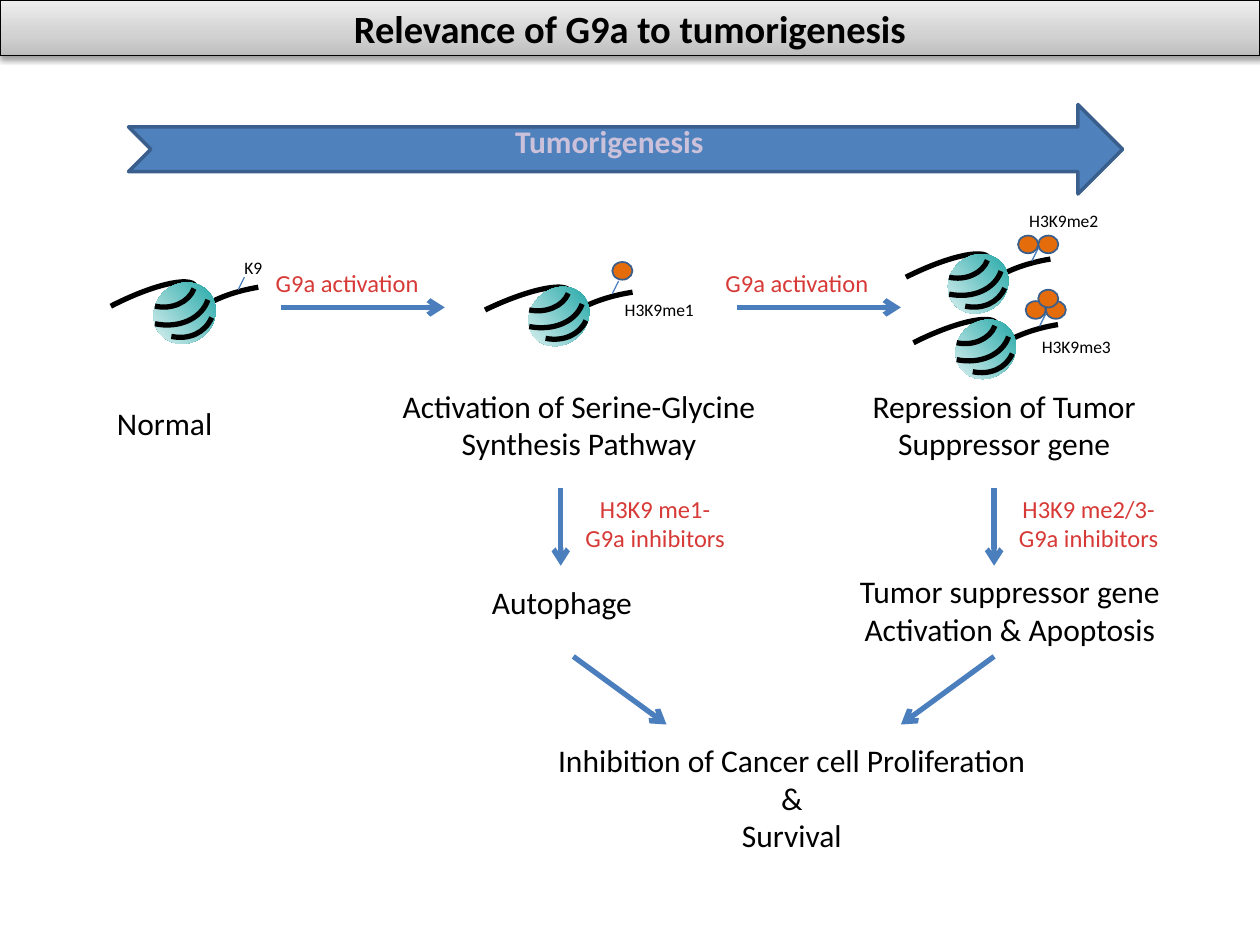
from copy import deepcopy

from lxml.etree import SubElement
from pptx import Presentation
from pptx.dml.color import RGBColor
from pptx.enum.shapes import MSO_CONNECTOR, MSO_SHAPE
from pptx.enum.text import MSO_ANCHOR, MSO_AUTO_SIZE, PP_ALIGN
from pptx.oxml.ns import qn
from pptx.util import Inches, Pt

BLACK = RGBColor(0x00, 0x00, 0x00)
WHITE = RGBColor(0xFF, 0xFF, 0xFF)
BLUE = RGBColor(0x4F, 0x81, 0xBD)
NAVY = RGBColor(0x3A, 0x5F, 0x8C)
STEEL = RGBColor(0x4B, 0x7E, 0xBC)
LILAC = RGBColor(0xCC, 0xC1, 0xDA)
RED = RGBColor(0xD7, 0x3A, 0x36)
ORANGE = RGBColor(0xE4, 0x6C, 0x0A)
TEAL = RGBColor(0x00, 0x99, 0x99)
GREYS = [(0, RGBColor(0xBD, 0xBD, 0xBD)), (0.35, RGBColor(0xD1, 0xD1, 0xD1)),
         (1, RGBColor(0xEE, 0xEE, 0xEE))]

# Bezier points in inches, measured from the outer end of the left DNA tail
TAILS = [
    [(0, 0), (0.33, -0.17), (0.63, -0.24), (0.67, -0.16)],
    [(1.17, -0.15), (0.81, -0.09), (0.55, 0.08), (0.57, 0.25)],
]
BANDS = [
    [(0.35, 0), (0.48, 0.03), (0.62, -0.03), (0.66, -0.14)],
    [(0.35, 0.14), (0.54, 0.18), (0.72, 0.10), (0.77, -0.05)],
    [(0.48, 0.24), (0.62, 0.27), (0.75, 0.21), (0.80, 0.09)],
]


def write(frame, words, size=18, color=BLACK, bold=False, align=PP_ALIGN.CENTER):
    frame.word_wrap = True
    frame.text = words
    for para in frame.paragraphs:
        para.alignment = align
        font = para.runs[0].font
        font.name, font.size, font.bold = "Calibri", Pt(size), bold
        font.color.rgb = color


def label(slide, words, box, **style):
    write(slide.shapes.add_textbox(*map(Inches, box)).text_frame, words, **style)


def blend(fill, stops, angle):
    """Fill with a linear gradient of (position, colour) stops."""
    fill.gradient()
    fill.gradient_angle = angle
    first = fill.gradient_stops[0]._gs
    for _ in stops[2:]:
        first.addnext(deepcopy(first))
    for stop, (place, color) in zip(fill.gradient_stops, stops):
        stop.position = place
        stop.color.rgb = color


def shape(slide, kind, box, fill=None, line=None, width=1):
    item = slide.shapes.add_shape(kind, *map(Inches, box))
    item.shadow.inherit = False
    if fill is not None:
        item.fill.solid()
        item.fill.fore_color.rgb = fill
    if line is None:
        item.line.fill.background()
    else:
        item.line.color.rgb = line
        item.line.width = Pt(width)
    return item


def line(slide, start, end, width=0.75, arrow=False):
    item = slide.shapes.add_connector(
        MSO_CONNECTOR.STRAIGHT, *map(Inches, start + end))
    item.line.color.rgb = STEEL
    item.line.width = Pt(width)
    if arrow:
        SubElement(item.line._get_or_add_ln(), qn("a:tailEnd"), type="arrow")
    SubElement(item._element.spPr, qn("a:effectLst"))


def curve(slide, points):
    """Draw one open cubic curve through a start, two controls and an end."""
    start, *rest = [(Inches(x), Inches(y)) for x, y in points]
    build = slide.shapes.build_freeform(*start)
    build.add_line_segments(rest, close=False)
    item = build.convert_to_shape()
    item.shadow.inherit = False
    item.fill.background()
    item.line.color.rgb = BLACK
    item.line.width = Pt(3)
    route = item._element.find(".//" + qn("a:path"))
    steps = route.findall(qn("a:lnTo"))
    bend = SubElement(route, qn("a:cubicBezTo"))
    for step in steps:
        bend.append(step[0])
        route.remove(step)


def histone(slide, x, y, wide=1, high=1):
    """Draw a nucleosome whose left DNA tail starts at x, y."""
    def strands(group):
        for points in group:
            curve(slide, [(x + a * wide, y + b * high) for a, b in points])

    strands(TAILS)
    ball = shape(slide, MSO_SHAPE.OVAL,
                 (x + 0.33 * wide, y - 0.18 * high, 0.51 * wide, 0.47 * high))
    blend(ball.fill, [(0, TEAL), (1, WHITE)], 0)
    ball.rotation = 139.8
    strands(BANDS)


def stem(slide, x, y):
    line(slide, (x, y), (x - 0.05, y + 0.1))


def methyl(slide, x, y):
    shape(slide, MSO_SHAPE.OVAL, (x, y, 0.16, 0.14), ORANGE, NAVY)


def header(slide):
    title = slide.shapes.title
    title.left, title.top, title.width, title.height = map(
        Inches, (0, 0, 10, 0.44))
    blend(title.fill, GREYS, 90)
    title.line.color.rgb = BLACK
    title.line.width = Pt(0.75)
    effects = SubElement(title._element.spPr, qn("a:effectLst"))
    shade = SubElement(effects, qn("a:outerShdw"), blurRad=str(Pt(3.1)),
                       dist=str(Pt(1.6)), dir="5400000", rotWithShape="0")
    tint = SubElement(shade, qn("a:srgbClr"), val="000000")
    SubElement(tint, qn("a:alpha"), val="38000")
    frame = title.text_frame
    frame.auto_size = MSO_AUTO_SIZE.NONE
    frame.vertical_anchor = MSO_ANCHOR.MIDDLE
    write(frame, "Relevance of G9a to tumorigenesis", size=22, bold=True)


def histones(slide):
    histone(slide, 0.88, 2.43)
    stem(slide, 1.94, 2.2)

    histone(slide, 3.85, 2.46, high=0.94)
    methyl(slide, 4.86, 2.08)
    stem(slide, 4.91, 2.23)

    for x, y in [(7.19, 2.2), (7.25, 2.72)]:
        histone(slide, x, y, wide=0.98, high=0.96)
        stem(slide, x + 1.05, y - 0.23)
        for shift in (1.05, 0.89):
            methyl(slide, x + shift, y - 0.33)
    methyl(slide, 8.24, 2.3)

    for words, box in [
        ("K9", (1.84, 1.99, 0.39, 0.29)),
        ("H3K9me1", (4.86, 2.32, 0.89, 0.29)),
        ("H3K9me2", (8.07, 1.62, 1.05, 0.29)),
        ("H3K9me3", (8.17, 2.62, 0.9, 0.29)),
    ]:
        label(slide, words, box, size=10, align=PP_ALIGN.LEFT)


def pathway(slide):
    for words, box in [
        ("Activation of Serine-Glycine\nSynthesis Pathway", (2.6, 3.02, 3.99, 0.76)),
        ("Repression of Tumor\nSuppressor gene", (6.65, 3.02, 2.64, 0.76)),
        ("Autophage", (3.72, 4.58, 1.48, 0.43)),
        ("Tumor suppressor gene\nActivation & Apoptosis", (6.56, 4.49, 2.91, 0.76)),
        ("Inhibition of Cancer cell Proliferation\n&\nSurvival",
         (4.05, 5.83, 4.47, 1.08)),
    ]:
        label(slide, words, box)
    label(slide, "Normal", (0.83, 3.16, 1.08, 0.43), align=PP_ALIGN.LEFT)

    for x in (2.09, 5.66):
        label(slide, "G9a activation", (x, 2.08, 1.53, 0.36),
              size=14, color=RED, align=PP_ALIGN.LEFT)
    for x, mark in [(4.45, "me1"), (7.89, "me2/3")]:
        label(slide, f"H3K9 {mark}-\nG9a inhibitors", (x, 3.87, 1.5, 0.61),
              size=14, color=RED)

    for start, end in [
        ((2.23, 2.44), (3.53, 2.44)),
        ((5.85, 2.44), (7.15, 2.44)),
        ((4.45, 3.87), (4.45, 4.49)),
        ((7.89, 3.87), (7.89, 4.49)),
        ((4.55, 5.21), (5.29, 5.75)),
        ((7.89, 5.21), (7.15, 5.75)),
    ]:
        line(slide, start, end, width=3, arrow=True)


def main():
    deck = Presentation()
    deck.slide_width, deck.slide_height = Inches(10), Inches(7.5)
    slide = deck.slides.add_slide(deck.slide_layouts[5])
    header(slide)
    shape(slide, MSO_SHAPE.NOTCHED_RIGHT_ARROW, (1.02, 0.83, 7.89, 0.71),
          BLUE, NAVY, 2)
    label(slide, "Tumorigenesis", (3.99, 0.92, 1.9, 0.43),
          color=LILAC, bold=True, align=PP_ALIGN.LEFT)
    histones(slide)
    pathway(slide)
    deck.save("out.pptx")


if __name__ == "__main__":
    main()
